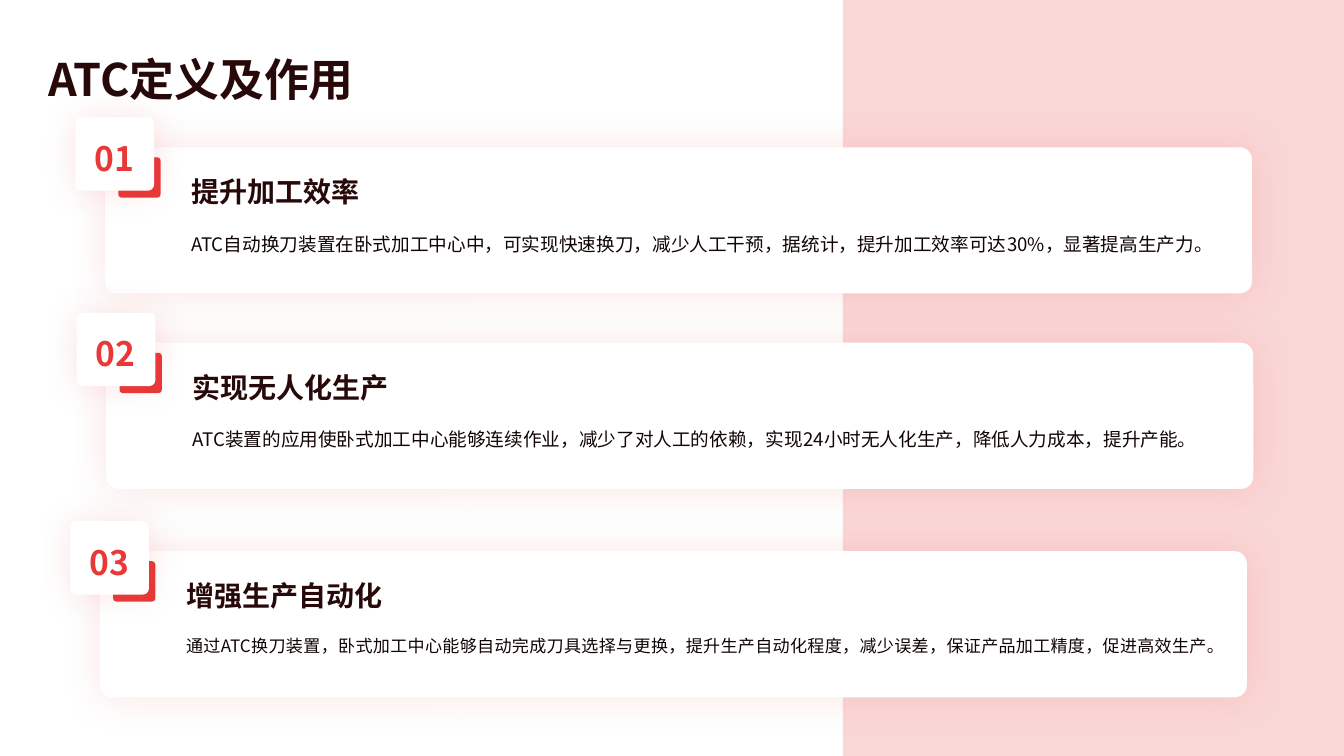
from pptx import Presentation
from pptx.dml.color import RGBColor
from pptx.enum.shapes import MSO_SHAPE
from pptx.enum.text import MSO_ANCHOR, PP_ALIGN
from pptx.oxml.xmlchemy import OxmlElement
from pptx.util import Pt

WHITE = RGBColor(0xFF, 0xFF, 0xFF)
PINK = RGBColor(0xFA, 0xD7, 0xD7)
RED = RGBColor(0xE8, 0x38, 0x37)
HEADING = RGBColor(0x28, 0x09, 0x09)
BODY = RGBColor(0x11, 0x04, 0x04)

# Left, top, heading, body, body size of each card
CARDS = [
    (74.9, 105.2, "提升加工效率",
     "ATC自动换刀装置在卧式加工中心中，可实现快速换刀，减少人工干预，据统计，提升加工效率可达30%，显著提高生产力。", 13.3),
    (75.8, 244.8, "实现无人化生产",
     "ATC装置的应用使卧式加工中心能够连续作业，减少了对人工的依赖，实现24小时无人化生产，降低人力成本，提升产能。", 13.3),
    (71.2, 393.7, "增强生产自动化",
     "通过ATC换刀装置，卧式加工中心能够自动完成刀具选择与更换，提升生产自动化程度，减少误差，保证产品加工精度，促进高效生产。", 12.2),
]


class SlideBuilder:
    font_name = "Noto Sans CJK SC"
    corner = 0.084

    def __init__(self, slide):
        self.slide = slide

    def block(self, left, top, width, height, color, rounded=True, glow=None):
        kind = MSO_SHAPE.ROUNDED_RECTANGLE if rounded else MSO_SHAPE.RECTANGLE
        shape = self.slide.shapes.add_shape(
            kind, Pt(left), Pt(top), Pt(width), Pt(height))
        if rounded:
            shape.adjustments[0] = self.corner
        shape.fill.solid()
        shape.fill.fore_color.rgb = color
        shape.line.fill.background()
        shape.shadow.inherit = False
        if glow:
            self.add_glow(shape, glow)

    def add_glow(self, shape, blur):
        """Soft red shadow, spread evenly on all sides."""
        shadow = OxmlElement("a:outerShdw")
        shadow.set("blurRad", str(Pt(blur)))
        shadow.set("dist", "0")
        shadow.set("algn", "ctr")
        shadow.set("rotWithShape", "0")
        color = OxmlElement("a:srgbClr")
        color.set("val", str(RED))
        alpha = OxmlElement("a:alpha")
        alpha.set("val", "12000")
        color.append(alpha)
        shadow.append(color)
        shape.element.spPr.find(
            "{http://schemas.openxmlformats.org/drawingml/2006/main}effectLst"
        ).append(shadow)

    def text(self, left, top, width, height, content, size, color, bold=True,
             align=PP_ALIGN.JUSTIFY, anchor=MSO_ANCHOR.TOP, line=1.0, gap=0):
        box = self.slide.shapes.add_textbox(
            Pt(left), Pt(top), Pt(width), Pt(height))
        frame = box.text_frame
        frame.word_wrap = True
        frame.vertical_anchor = anchor
        paragraph = frame.paragraphs[0]
        paragraph.text = content
        paragraph.alignment = align
        paragraph.line_spacing = line
        paragraph.space_before = paragraph.space_after = Pt(gap)
        font = paragraph.font
        font.size = Pt(size)
        font.bold = bold
        font.color.rgb = color
        font.name = self.font_name
        # Chinese characters take the East Asian typeface
        east_asian = OxmlElement("a:ea")
        east_asian.set("typeface", self.font_name)
        paragraph._p.pPr.get_or_add_defRPr().append(east_asian)

    def card(self, number, left, top, heading, body, body_size):
        self.block(left, top, 819.4, 104.4, WHITE, glow=28)
        # Number badge
        self.block(left + 9.6, top + 7.2, 30.2, 28.8, RED)
        self.block(left - 21, top - 21.4, 56.2, 52.4, WHITE, glow=25)
        self.text(left - 20.2, top - 10.2, 54, 33.8, f"{number:02d}", 24, RED,
                  align=PP_ALIGN.CENTER)
        # Wording
        self.text(left + 54.6, top + 52.6, 744.5, 34.6, body, body_size, BODY,
                  bold=False, line=1.3, gap=3)
        self.text(left + 54.6, top + 14.4, 744.5, 34.6, heading, 20, HEADING,
                  anchor=MSO_ANCHOR.MIDDLE)


def main():
    presentation = Presentation()
    presentation.slide_width = Pt(960)
    presentation.slide_height = Pt(540)
    builder = SlideBuilder(
        presentation.slides.add_slide(presentation.slide_layouts[6]))

    # Side panel
    builder.block(602, 0, 358, 540, PINK, rounded=False)

    # Numbered cards
    for number, card in enumerate(CARDS, start=1):
        builder.card(number, *card)

    # Title
    builder.text(27.4, 23.8, 563.8, 56.9, "ATC定义及作用", 32, HEADING,
                 align=PP_ALIGN.LEFT, anchor=MSO_ANCHOR.MIDDLE, line=1.2)

    presentation.save("out.pptx")


if __name__ == "__main__":
    main()
